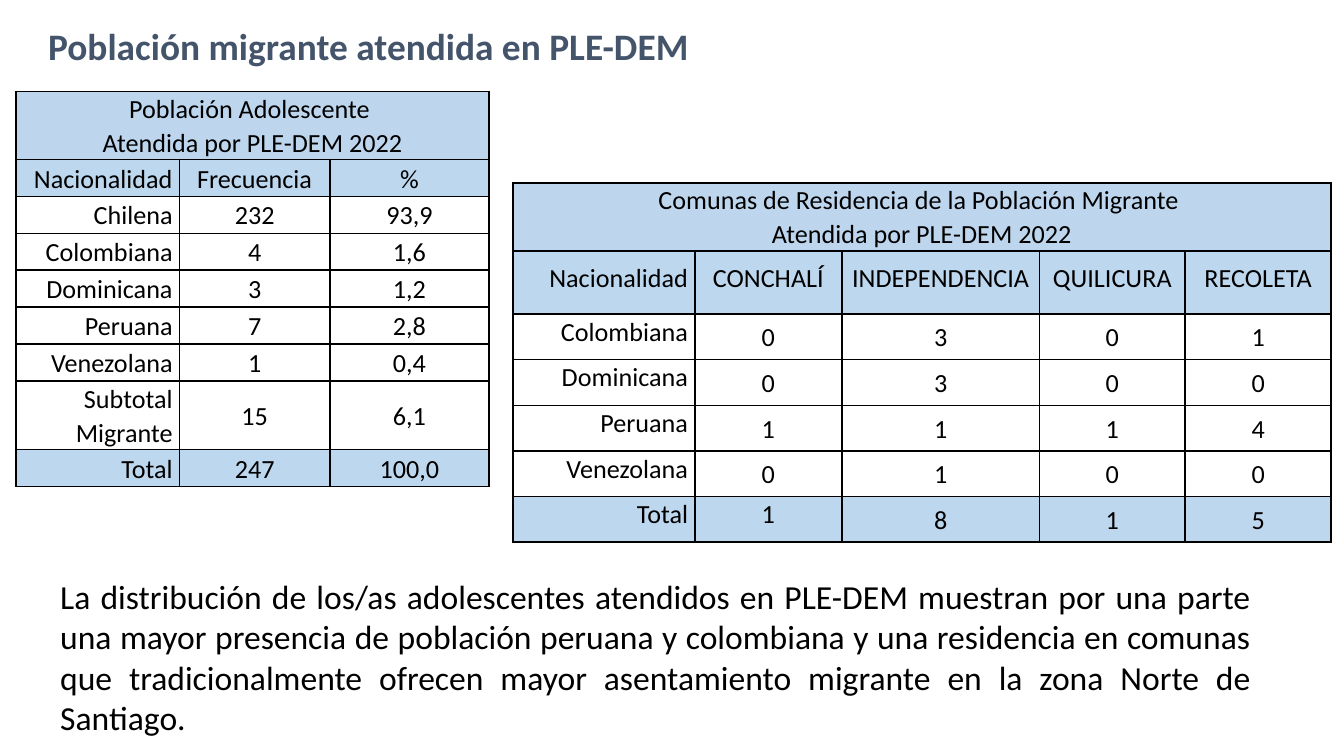
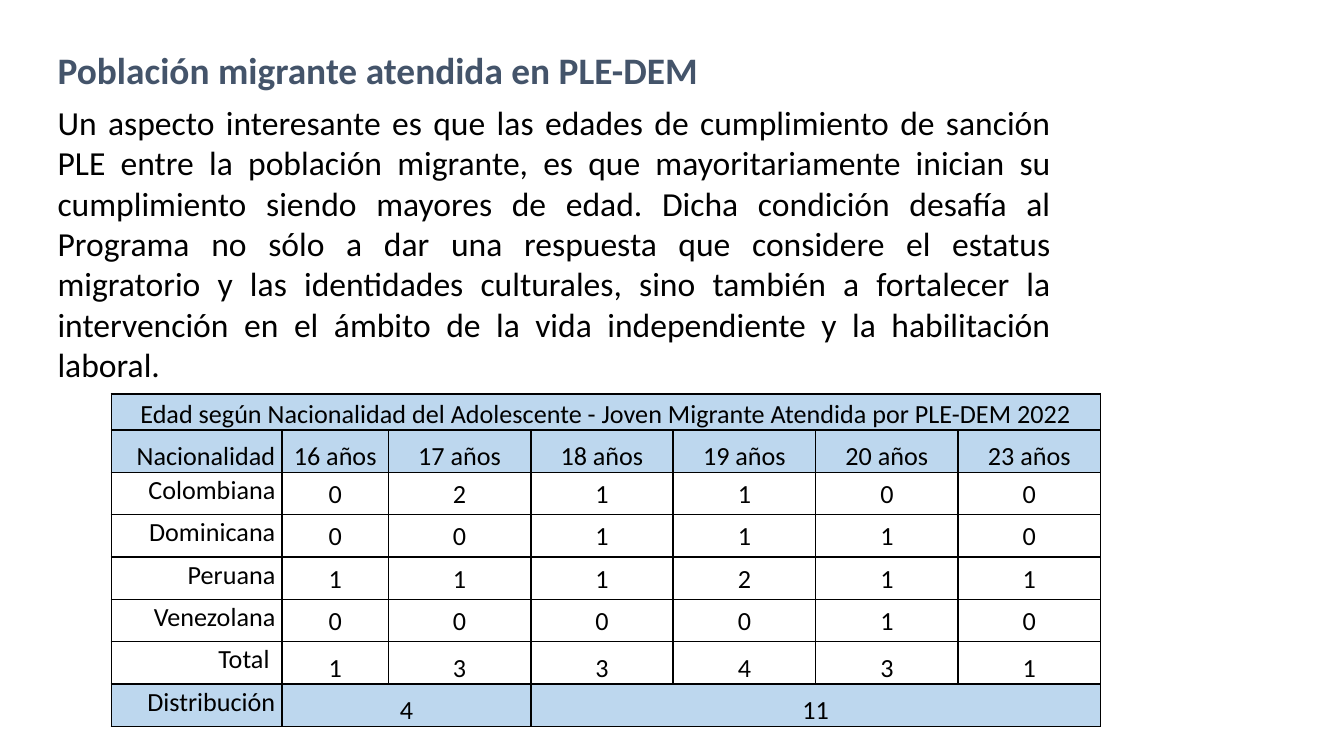
from dataclasses import dataclass
from typing import Any

from lxml import etree
from pptx import Presentation
from pptx import util as u
from pptx.dml.color import RGBColor
from pptx.enum import text as t
from pptx.oxml import ns

PX = u.Inches(1) // 200  # two hundred px to the inch

BLACK = RGBColor(0x00, 0x00, 0x00)
WHITE = RGBColor(0xFF, 0xFF, 0xFF)
SLATE = RGBColor(0x44, 0x54, 0x6A)
SKY = RGBColor(0xBD, 0xD7, 0xEE)
SOFT_SKY = RGBColor(0xBD, 0xD6, 0xEE)

TOP, MIDDLE, BOTTOM = t.MSO_ANCHOR.TOP, t.MSO_ANCHOR.MIDDLE, t.MSO_ANCHOR.BOTTOM
LEFT, CENTER, RIGHT = t.PP_ALIGN.LEFT, t.PP_ALIGN.CENTER, t.PP_ALIGN.RIGHT
JUSTIFY = t.PP_ALIGN.JUSTIFY


def write(frame, content, size=14, color=BLACK, bold=False, align=LEFT, spacing=None):
    """Fill a text frame, one paragraph for each line of content."""
    frame.word_wrap = True
    for index, line in enumerate(content.split("\n")):
        paragraph = frame.paragraphs[0] if index == 0 else frame.add_paragraph()
        paragraph.alignment = align
        paragraph.line_spacing = spacing
        run = paragraph.add_run()
        run.text = line
        run.font.name = "Calibri"
        run.font.size = u.Pt(size)
        run.font.bold = bold
        run.font.color.rgb = color


@dataclass
class Row:
    """One table row; None in cells extends the cell on its left."""
    height: int
    cells: list
    fill: Any = None
    anchor: Any = MIDDLE
    label_anchor: Any = MIDDLE
    spacing: Any = 1.07


class Deck:
    def __init__(self, width, height):
        self.prs = Presentation()
        self.prs.slide_width, self.prs.slide_height = width * PX, height * PX
        self.slide = None

    def new_slide(self):
        self.slide = self.prs.slides.add_slide(self.prs.slide_layouts[6])

    def text(self, box, content, **style):
        frame = self.slide.shapes.add_textbox(*(n * PX for n in box)).text_frame
        frame.auto_size = t.MSO_AUTO_SIZE.SHAPE_TO_FIT_TEXT
        write(frame, content, **style)

    def title(self, box):
        self.text(box, "Población migrante atendida en PLE-DEM",
                  size=20, color=SLATE, bold=True)

    def body(self, box, content):
        self.text(box, content, size=18, align=JUSTIFY)

    def table(self, left, top, widths, rows):
        height = sum(row.height for row in rows)
        table = self.slide.shapes.add_table(
            len(rows), len(widths), left * PX, top * PX,
            sum(widths) * PX, height * PX).table
        table.first_row = table.horz_banding = False
        for column, width in zip(table.columns, widths):
            column.width = width * PX
        for r, row in enumerate(rows):
            table.rows[r].height = row.height * PX
            for c, content in enumerate(row.cells):
                self.cell(table.cell(r, c), row, content, c == 0)
            self.merge(table, r, row.cells)
        return table

    def cell(self, cell, row, content, is_label):
        cell.margin_left = cell.margin_right = 10 * PX
        cell.margin_top = cell.margin_bottom = 0
        cell.vertical_anchor = row.label_anchor if is_label else row.anchor
        self.border(cell)
        if row.fill is None:
            cell.fill.background()
        else:
            cell.fill.solid()
            cell.fill.fore_color.rgb = row.fill
        if content is not None:
            spans_row = is_label and not any(row.cells[1:])
            write(cell.text_frame, content, spacing=row.spacing,
                  align=RIGHT if is_label and not spans_row else CENTER)

    @staticmethod
    def border(cell):
        properties = cell._tc.get_or_add_tcPr()
        for side in ("L", "R", "T", "B"):
            line = etree.SubElement(properties, ns.qn(f"a:ln{side}"), w=str(u.Pt(1)))
            fill = etree.SubElement(line, ns.qn("a:solidFill"))
            etree.SubElement(fill, ns.qn("a:srgbClr"), val=str(BLACK))

    @staticmethod
    def merge(table, r, cells):
        starts = [c for c, content in enumerate(cells) if content is not None]
        for start, end in zip(starts, starts[1:] + [len(cells)]):
            if end - start > 1:
                table.cell(r, start).merge(table.cell(r, end - 1))


def heading(height, content, columns, fill):
    return Row(height, [content] + [None] * (columns - 1), fill, BOTTOM, BOTTOM)


def attended_slide(deck):
    deck.new_slide()

    # Adolescents by nationality
    people = [
        ["Chilena", "232", "93,9"],
        ["Colombiana", "4", "1,6"],
        ["Dominicana", "3", "1,2"],
        ["Peruana", "7", "2,8"],
        ["Venezolana", "1", "0,4"],
    ]
    deck.table(24, 136, [243, 224, 237], [
        heading(101, "Población Adolescente \nAtendida por PLE-DEM 2022", 3, SOFT_SKY),
        Row(55, ["Nacionalidad", "Frecuencia", "%"], SKY),
        *(Row(55, cells, WHITE) for cells in people),
        Row(102, ["Subtotal Migrante", "15", "6,1"], WHITE),
        Row(55, ["Total", "247", "100,0"], SKY),
    ])

    # Migrants by district
    residents = [
        ["Colombiana", "0", "3", "0", "1"],
        ["Dominicana", "0", "3", "0", "0"],
        ["Peruana", "1", "1", "1", "4"],
        ["Venezolana", "0", "1", "0", "0"],
    ]
    districts = ["Nacionalidad", "CONCHALÍ", "INDEPENDENCIA", "QUILICURA", "RECOLETA"]
    district_table = deck.table(763, 272, [271, 219, 294, 217, 217], [
        heading(101, "Comunas de Residencia de la Población Migrante \n"
                     "Atendida por PLE-DEM 2022", 5, SOFT_SKY),
        Row(94, districts, SKY, spacing=u.Pt(13)),
        *(Row(68, cells, label_anchor=TOP) for cells in residents),
        Row(68, ["Total", "1", "8", "1", "5"], SKY, label_anchor=TOP),
    ])
    # The first total sits at the top of its cell
    district_table.cell(6, 1).vertical_anchor = TOP

    deck.title((52, 24, 1488, 88))
    deck.body((70, 847, 1812, 262),
              "La distribución de los/as adolescentes atendidos en PLE-DEM muestran por "
              "una parte una mayor presencia de población peruana y colombiana y una "
              "residencia en comunas que tradicionalmente ofrecen mayor asentamiento "
              "migrante en la zona Norte de Santiago.")


def ages_slide(deck):
    deck.new_slide()

    # Migrants by age
    ages = [f"{age} años" for age in (16, 17, 18, 19, 20, 23)]
    counts = [
        ["Colombiana", "0", "2", "1", "1", "0", "0"],
        ["Dominicana", "0", "0", "1", "1", "1", "0"],
        ["Peruana", "1", "1", "1", "2", "1", "1"],
        ["Venezolana", "0", "0", "0", "0", "1", "0"],
    ]
    deck.table(166, 586, [254, 158] + [212] * 5, [
        heading(54, "Edad según Nacionalidad del Adolescente - Joven Migrante "
                    "Atendida por PLE-DEM 2022", 7, SKY),
        Row(63, ["Nacionalidad", *ages], SKY, BOTTOM, BOTTOM),
        *(Row(63, cells, label_anchor=TOP) for cells in counts),
        Row(63, ["Total ", "1", "3", "3", "4", "3", "1"], None, BOTTOM, TOP),
        Row(63, ["Distribución", "4", None, "11", None, None, None], SKY, BOTTOM, TOP),
    ])

    deck.title((66, 60, 1532, 88))
    deck.body((66, 142, 1518, 444),
              "Un aspecto interesante es que las edades de cumplimiento de sanción PLE "
              "entre la población migrante, es que mayoritariamente inician su "
              "cumplimiento siendo mayores de edad. Dicha condición desafía al Programa "
              "no sólo a dar una respuesta que considere el estatus migratorio y las "
              "identidades culturales, sino también a fortalecer la intervención en el "
              "ámbito de la vida independiente y la habilitación laboral.")


def main():
    deck = Deck(2000, 1125)
    attended_slide(deck)
    ages_slide(deck)
    deck.prs.save("out.pptx")


if __name__ == "__main__":
    main()
